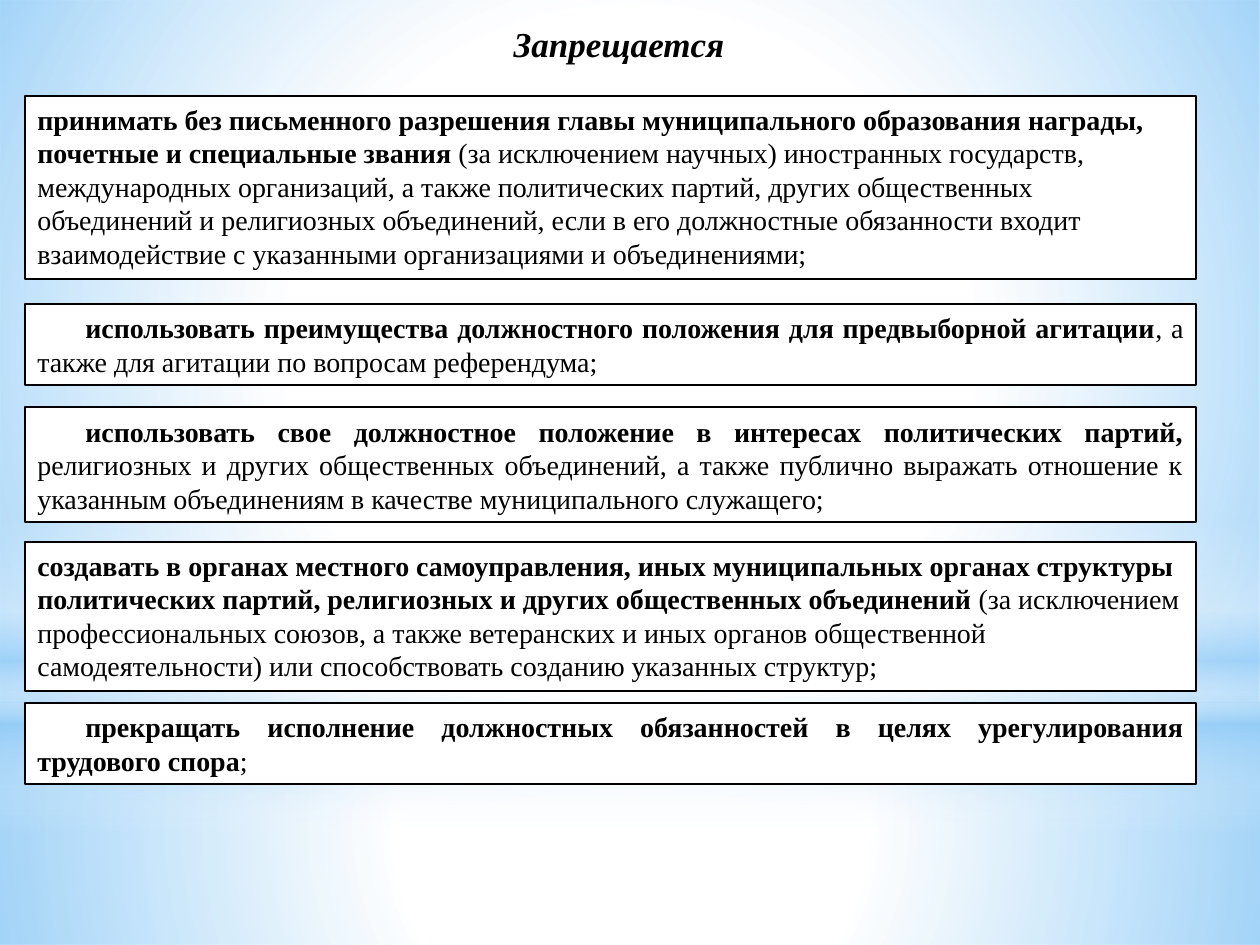
"""Build the slide listing what a municipal employee is forbidden to do."""
from lxml import etree
from pptx import Presentation
from pptx import util as u
from pptx.dml.color import RGBColor
from pptx.enum import shapes, text
from pptx.oxml.ns import qn

PX = 914400 / 126
FONT = "Times New Roman"
BLACK, WHITE, BLUE = "000000", "FFFFFF", "8BC9F7"
LEFT, WIDTH, INDENT = 25, 1171, 48

TITLE = "Запрещается"
TITLE_AT = (501, 16, 238, 55)

GLOWS = [
    ("RECTANGLE", (0, 703, 1260, 242), "circle",
     [(0, WHITE, 91), (37, WHITE, 76), (100, BLUE, 79)]),
    ("RECTANGLE", (0, 0, 1260, 703), "circle",
     [(0, WHITE, 89), (48, WHITE, 62), (100, BLUE, 79)]),
    ("RECTANGLE", (0, 519, 1260, 315), "linear",
     [(0, WHITE, 0), (29, WHITE, 30), (45, BLUE, 40),
      (55, WHITE, 26), (65, BLUE, 60), (100, WHITE, 0)]),
    ("OVAL", (0, 220, 1260, 703), "circle",
     [(0, WHITE, 100), (56, WHITE, 0)]),
]

BANS = [
    (96, 183, False,
     "принимать без письменного разрешения главы муниципального образования награды, "
     "почетные и специальные звания ",
     "(за исключением научных) иностранных государств, международных организаций, "
     "а также политических партий, других общественных объединений и религиозных "
     "объединений, если в его должностные обязанности входит взаимодействие с "
     "указанными организациями и объединениями;"),
    (304, 81, True,
     "использовать преимущества должностного положения для предвыборной агитации",
     ", а также для агитации по вопросам референдума;"),
    (407, 115, True,
     "использовать свое должностное положение в интересах политических партий,",
     " религиозных и других общественных объединений, а также публично выражать "
     "отношение к указанным объединениям в качестве муниципального служащего;"),
    (542, 149, False,
     "создавать в органах местного самоуправления, иных муниципальных органах "
     "структуры политических партий, религиозных и других общественных объединений ",
     "(за исключением профессиональных союзов, а также ветеранских и иных органов "
     "общественной самодеятельности) или способствовать созданию указанных структур;"),
    (703, 81, True,
     "прекращать исполнение должностных обязанностей в целях урегулирования "
     "трудового спора",
     ";"),
]


def px(n):
    return u.Emu(round(n * PX))


def rgb(color):
    return RGBColor.from_string(color)


def add_run(p, words, size=16, bold=False, italic=False, color=BLACK):
    r = p.add_run()
    r.text = words
    r.font.name, r.font.size = FONT, u.Pt(size)
    r.font.bold, r.font.italic = bold, italic
    r.font.color.rgb = rgb(color)


def add_shape(s, kind, at):
    sp = s.shapes.add_shape(getattr(shapes.MSO_SHAPE, kind), *map(px, at))
    sp.shadow.inherit = False
    return sp


def add_glow(s, kind, at, style, stops):
    sp = add_shape(s, kind, at)
    sp.line.fill.background()
    sp.fill.gradient()
    old = sp._element.spPr.find(qn("a:gradFill"))
    grad = etree.SubElement(sp._element.spPr, qn("a:gradFill"), rotWithShape="1")
    old.getparent().replace(old, grad)
    stop_list = etree.SubElement(grad, qn("a:gsLst"))
    for pos, color, alpha in stops:
        gs = etree.SubElement(stop_list, qn("a:gs"), pos=str(pos * 1000))
        clr = etree.SubElement(gs, qn("a:srgbClr"), val=color)
        etree.SubElement(clr, qn("a:alpha"), val=str(alpha * 1000))
    if style == "circle":
        centre = etree.SubElement(grad, qn("a:path"), path="circle")
        etree.SubElement(centre, qn("a:fillToRect"),
                         **dict.fromkeys("ltrb", "50000"))
    else:
        etree.SubElement(grad, qn("a:lin"), ang="5400000", scaled="0")


def add_ban(s, top, height, justified, strong, plain):
    sp = add_shape(s, "RECTANGLE", (LEFT, top, WIDTH, height))
    sp.fill.solid()
    sp.fill.fore_color.rgb = rgb(WHITE)
    sp.line.color.rgb, sp.line.width = rgb(BLACK), u.Pt(1.25)
    tf = sp.text_frame
    tf.word_wrap = True
    tf.auto_size = text.MSO_AUTO_SIZE.SHAPE_TO_FIT_TEXT
    p = tf.paragraphs[0]
    if justified:
        tf.vertical_anchor = text.MSO_ANCHOR.MIDDLE
        p.alignment = text.PP_ALIGN.JUSTIFY
        p._p.get_or_add_pPr().set("indent", str(px(INDENT)))
    else:
        tf.vertical_anchor = text.MSO_ANCHOR.TOP
        p.alignment = text.PP_ALIGN.LEFT
    add_run(p, strong, bold=True)
    add_run(p, plain)


def set_title(s):
    sp = s.shapes.title
    sp.left, sp.top, sp.width, sp.height = map(px, TITLE_AT)
    tf = sp.text_frame
    tf.word_wrap = False
    tf.auto_size = text.MSO_AUTO_SIZE.SHAPE_TO_FIT_TEXT
    tf.vertical_anchor = text.MSO_ANCHOR.TOP
    p = tf.paragraphs[0]
    p.alignment = text.PP_ALIGN.LEFT
    add_run(p, TITLE, size=20, bold=True, italic=True)
    s.shapes._spTree.append(sp._element)


def main():
    prs = Presentation()
    prs.slide_width, prs.slide_height = px(1260), px(945)
    s = prs.slides.add_slide(prs.slide_layouts[5])
    s.background.fill.solid()
    s.background.fill.fore_color.rgb = rgb(WHITE)
    for glow in GLOWS:
        add_glow(s, *glow)
    for ban in BANS:
        add_ban(s, *ban)
    set_title(s)
    prs.save("out.pptx")


if __name__ == "__main__":
    main()
